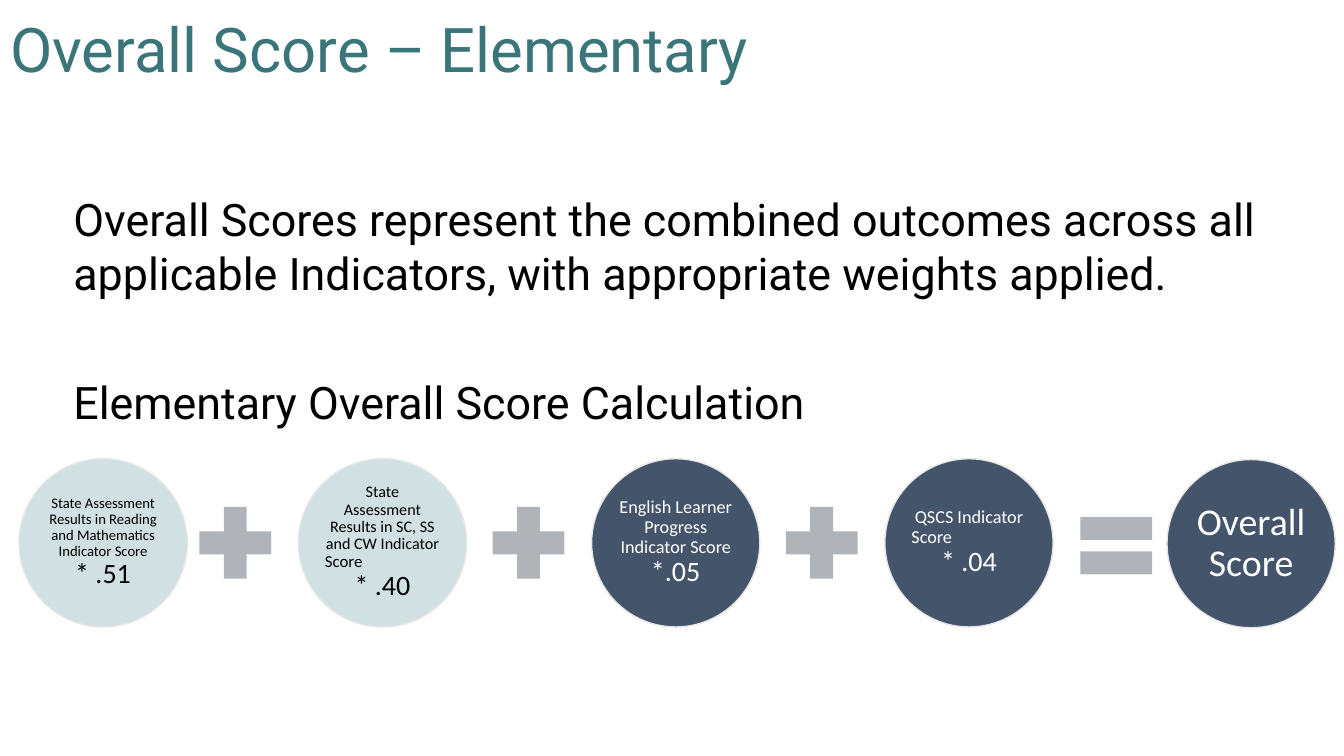
import pptx
import pptx.util
import pptx.dml.color
import pptx.enum.shapes
import pptx.enum.text
from dataclasses import dataclass

Cm = pptx.util.Cm
Pt = pptx.util.Pt
SHAPE = pptx.enum.shapes.MSO_SHAPE
ALIGN = pptx.enum.text.PP_ALIGN
ANCHOR = pptx.enum.text.MSO_ANCHOR
AUTO = pptx.enum.text.MSO_AUTO_SIZE


@dataclass(frozen=True)
class Theme:
    heading_font: str = "Roboto"
    label_font: str = "Calibri"
    title: str = "3A757A"
    black: str = "000000"
    white: str = "FFFFFF"
    pale: str = "D0E0E3"
    navy: str = "44546A"
    sign: str = "B0B4B9"
    outline: str = "E7E6E6"
    title_size: float = 44
    body_size: float = 32
    weight_size: float = 20
    result_size: float = 27


class Deck:
    def __init__(self, theme):
        self.theme = theme
        self.prs = pptx.Presentation()
        self.prs.slide_width = Cm(33.87)
        self.prs.slide_height = Cm(19.05)
        self.s = self.prs.slides.add_slide(self.prs.slide_layouts[5])

    def set_all(self, target, values):
        for name, value in values.items():
            setattr(target, name, value)

    def paragraph(self, p, text, font, size, color, **layout):
        r = p.add_run()
        r.text = text
        self.set_all(r.font, {"name": font, "size": Pt(size)})
        r.font.color.rgb = pptx.dml.color.RGBColor.from_string(color)
        self.set_all(p, layout)

    def title(self, text, left, top, width, height):
        sp = self.s.shapes.title
        self.set_all(sp, {"left": Cm(left), "top": Cm(top),
                          "width": Cm(width), "height": Cm(height)})
        tf = sp.text_frame
        self.set_all(tf, {"auto_size": AUTO.NONE, "vertical_anchor": ANCHOR.MIDDLE})
        t = self.theme
        self.paragraph(tf.paragraphs[0], text, t.heading_font, t.title_size, t.title,
                       alignment=ALIGN.LEFT, line_spacing=0.9)

    def body(self, texts, left, top, width, height, gap):
        sp = self.s.shapes.add_textbox(Cm(left), Cm(top), Cm(width), Cm(height))
        tf = sp.text_frame
        tf.word_wrap = True
        t = self.theme
        for i, text in enumerate(texts):
            p = tf.add_paragraph() if i else tf.paragraphs[0]
            self.paragraph(p, text, t.heading_font, t.body_size, t.black,
                           space_before=Pt(gap if i else 0))

    def shape(self, kind, left, top, size, fill):
        sp = self.s.shapes.add_shape(kind, Cm(left), Cm(top), Cm(size), Cm(size))
        sp.shadow.inherit = False
        sp.fill.solid()
        sp.fill.fore_color.rgb = pptx.dml.color.RGBColor.from_string(fill)
        sp.line.fill.background()
        return sp

    def circle(self, left, top, size, fill, color, lines):
        sp = self.shape(SHAPE.OVAL, left, top, size, fill)
        sp.line.color.rgb = pptx.dml.color.RGBColor.from_string(self.theme.outline)
        sp.line.width = Pt(1)
        tf = sp.text_frame
        inset = Cm(0.05)
        self.set_all(tf, {"word_wrap": True, "vertical_anchor": ANCHOR.MIDDLE,
                          "margin_left": inset, "margin_right": inset,
                          "margin_top": inset, "margin_bottom": inset})
        for i, (text, points, align) in enumerate(lines):
            p = tf.add_paragraph() if i else tf.paragraphs[0]
            self.paragraph(p, text, self.theme.label_font, points, color,
                           alignment=align, line_spacing=0.9)


def main():
    t = Theme()
    deck = Deck(t)
    deck.title("Overall Score – Elementary", 0, -0.51, 29.21, 3.68)
    deck.body(["Overall Scores represent the combined outcomes across all "
               "applicable Indicators, with appropriate weights applied.",
               "Elementary Overall Score Calculation"], 1.6, 4.7, 30.5, 6.3, 54)

    mid, start = ALIGN.CENTER, ALIGN.LEFT
    weight = t.weight_size
    circles = [
        (0.48, 11.56, t.pale, t.black, [
            ("State Assessment Results in Reading and Mathematics Indicator Score", 10.5, mid),
            ("* .51", weight, mid)]),
        (7.52, 11.56, t.pale, t.black, [
            ("State", 11.5, mid),
            ("Assessment Results in SC, SS and CW Indicator", 11.5, mid),
            ("Score", 12, start),
            ("* .40", weight, mid)]),
        (14.91, 11.56, t.navy, t.white, [
            ("English Learner Progress Indicator Score", 13, mid),
            ("*.05", weight, mid)]),
        (22.3, 11.56, t.navy, t.white, [
            ("QSCS Indicator", 13, mid),
            ("Score", 13, start),
            ("* .04", weight, mid)]),
        (29.41, 11.58, t.navy, t.white, [("Overall Score", t.result_size, mid)]),
    ]
    for left, top, fill, color, lines in circles:
        deck.circle(left, top, 4.24, fill, color, lines)

    for i in range(3):
        deck.shape(SHAPE.MATH_PLUS, 4.7 + 7.39 * i, 12.45, 2.46, t.sign)
    deck.shape(SHAPE.MATH_EQUAL, 26.9, 12.52, 2.46, t.sign)

    deck.prs.save("out.pptx")


if __name__ == "__main__":
    main()
